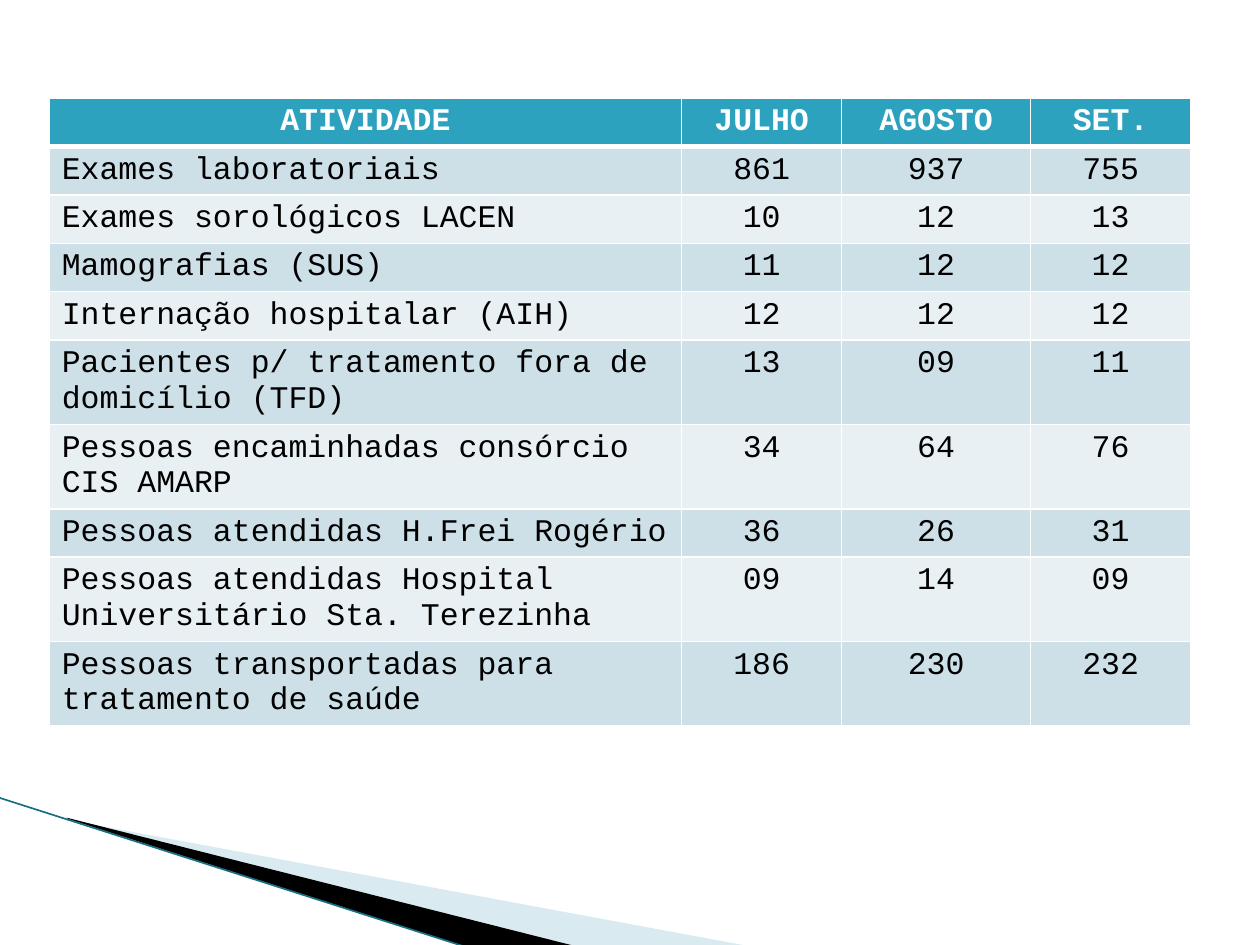
"""Build a slide with a monthly table of health service activities."""
from lxml import etree
from pptx import Presentation
from pptx import util as u
from pptx.dml.color import RGBColor
from pptx.enum import shapes, text
from pptx.oxml.ns import qn


def color(value):
    return RGBColor.from_string(value)


def add_border(cell, side, width):
    line = etree.SubElement(cell._tc.get_or_add_tcPr(), qn(f"a:ln{side}"), w=str(u.Pt(width)))
    fill = etree.SubElement(line, qn("a:solidFill"))
    etree.SubElement(fill, qn("a:srgbClr"), val="FFFFFF")


presentation = Presentation()
presentation.slide_width = u.Inches(10)
presentation.slide_height = u.Inches(7.5)
slide = presentation.slides.add_slide(presentation.slide_layouts[6])

wedges = [
    ("A0CBDC", 40, [(0.55, 6.51), (5.95, 7.51), (4.56, 7.51), (0.55, 6.5)]),
    ("000000", 100, [(0.53, 6.49), (4.57, 7.51), (3.72, 7.52), (0.54, 6.5)]),
]
for fill_color, opacity, corners in wedges:
    points = [(u.Inches(x), u.Inches(y)) for x, y in corners]
    builder = slide.shapes.build_freeform(*points[0])
    builder.add_line_segments(points[1:], close=True)
    wedge = builder.convert_to_shape()
    wedge.shadow.inherit = False
    wedge.line.fill.background()
    wedge.fill.solid()
    wedge.fill.fore_color.rgb = color(fill_color)
    if opacity < 100:
        tint = wedge._element.spPr.find(f"{qn('a:solidFill')}/{qn('a:srgbClr')}")
        etree.SubElement(tint, qn("a:alpha"), val=str(opacity * 1000))

edge = slide.shapes.add_connector(
    shapes.MSO_CONNECTOR.STRAIGHT,
    u.Inches(-0.01), u.Inches(6.33), u.Inches(3.71), u.Inches(7.52),
)
edge.line.color.rgb = color("196F82")
edge.line.width = u.Pt(0.95)
etree.SubElement(edge._element.spPr, qn("a:effectLst"))

rows = [
    ("ATIVIDADE", "JULHO", "AGOSTO", "SET."),
    ("Exames laboratoriais", "861", "937", "755"),
    ("Exames sorológicos LACEN", "10", "12", "13"),
    ("Mamografias (SUS)", "11", "12", "12"),
    ("Internação hospitalar (AIH)", "12", "12", "12"),
    ("Pacientes p/ tratamento fora de domicílio (TFD)", "13", "09", "11"),
    ("Pessoas encaminhadas consórcio CIS AMARP", "34", "64", "76"),
    ("Pessoas atendidas H.Frei Rogério", "36", "26", "31"),
    ("Pessoas atendidas Hospital Universitário Sta. Terezinha", "09", "14", "09"),
    ("Pessoas transportadas para tratamento de saúde", "186", "230", "232"),
]
column_widths = [5.02, 1.27, 1.5, 1.27]
one_line, two_lines, line_capacity = 0.38, 0.67, 32
table = slide.shapes.add_table(
    len(rows), len(column_widths),
    u.Inches(0.39), u.Inches(0.78), u.Inches(9.06), u.Inches(5),
).table
for column, width in zip(table.columns, column_widths):
    column.width = u.Inches(width)

for row_index, values in enumerate(rows):
    header = row_index == 0
    height = two_lines if len(values[0]) > line_capacity else one_line
    table.rows[row_index].height = u.Inches(height)
    band = "2DA2BF" if header else ("E8F0F4", "CDE0E8")[row_index % 2]
    for column_index, value in enumerate(values):
        cell = table.cell(row_index, column_index)
        top = 3 if row_index == 1 else 1
        bottom = 3 if header else 1
        for side, width in zip("LRTB", (1, 1, top, bottom)):
            add_border(cell, side, width)
        cell.fill.solid()
        cell.fill.fore_color.rgb = color(band)
        cell.text = value
        paragraph = cell.text_frame.paragraphs[0]
        centered = header or column_index > 0
        paragraph.alignment = text.PP_ALIGN.CENTER if centered else text.PP_ALIGN.LEFT
        paragraph.font.name = "Courier New"
        paragraph.font.size = u.Pt(18)
        paragraph.font.bold = header
        paragraph.font.color.rgb = color("FFFFFF" if header else "000000")

presentation.save("out.pptx")
